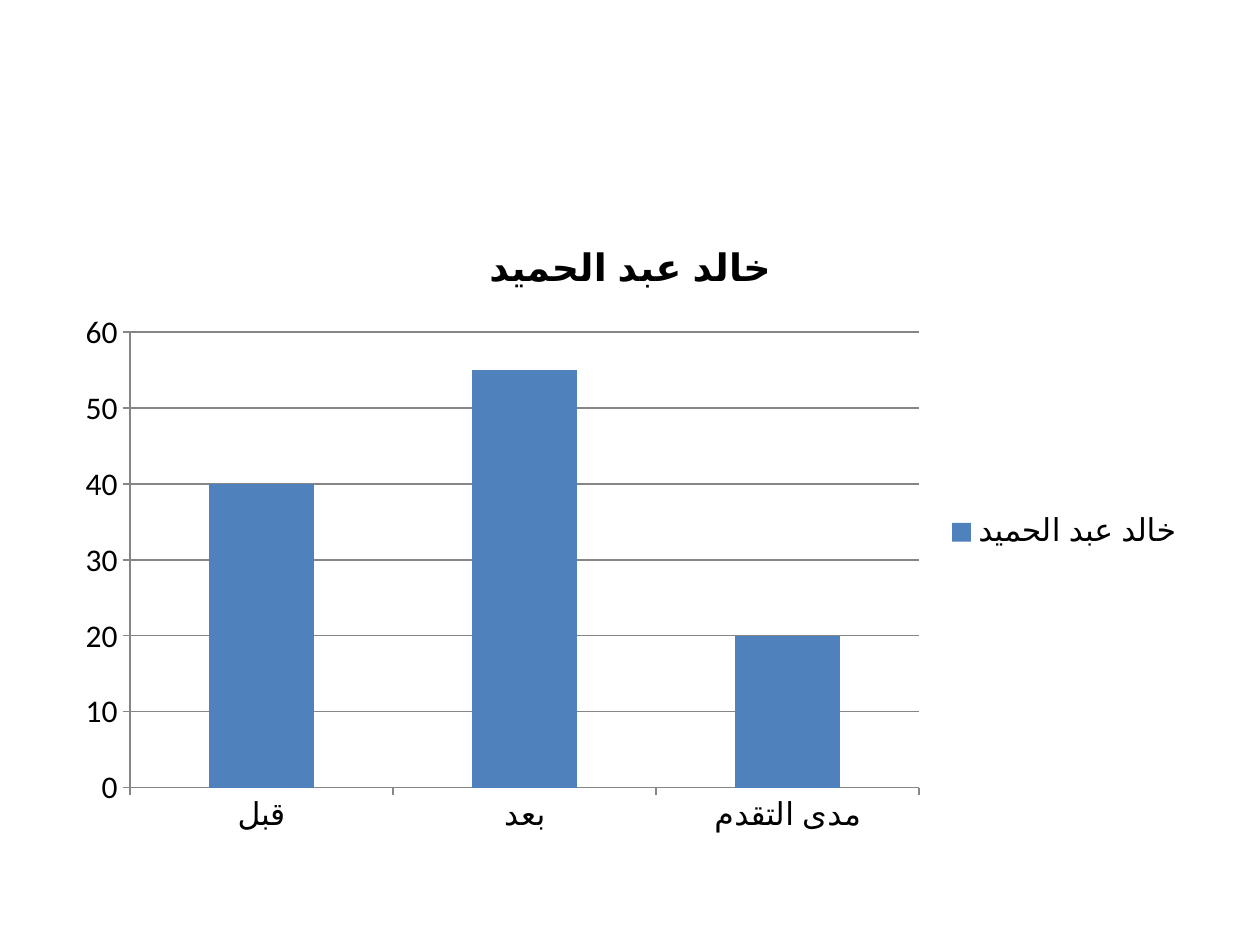
"""Build a slide with a column chart of one pupil's progress."""
import pptx
import pptx.chart.data
import pptx.dml.color
import pptx.enum.chart
import pptx.util

Pt = pptx.util.Pt
enum = pptx.enum.chart
colors = {
    name: pptx.dml.color.RGBColor.from_string(code)
    for name, code in {"text": "000000", "bar": "4F81BD", "line": "868686"}.items()
}
pupil = "خالد عبد الحميد"

deck = pptx.Presentation()
deck.slide_width, deck.slide_height = Pt(720), Pt(540)
slide = deck.slides.add_slide(deck.slide_layouts[6])

data = pptx.chart.data.CategoryChartData()
data.categories = ["قبل", "بعد", "مدى التقدم"]
data.add_series(pupil, [40, 55, 20])
chart = slide.shapes.add_chart(
    enum.XL_CHART_TYPE.COLUMN_CLUSTERED, Pt(36), Pt(126), Pt(648), Pt(356.4), data
).chart
chart.font.name = "Calibri"
chart.font.size = Pt(18)
chart.font.color.rgb = colors["text"]

chart.has_title = True
title = chart.chart_title.text_frame.paragraphs[0].add_run()
title.text = pupil
title.font.name = "Calibri"
title.font.size = Pt(21.6)
title.font.bold = True
title.font.color.rgb = colors["text"]

chart.has_legend = True
chart.legend.position = enum.XL_LEGEND_POSITION.RIGHT
chart.legend.include_in_layout = False

plot = chart.plots[0]
plot.gap_width = 150
plot.vary_by_categories = False
bars = plot.series[0].format.fill
bars.solid()
bars.fore_color.rgb = colors["bar"]

scale = chart.value_axis
scale.minimum_scale, scale.maximum_scale, scale.major_unit = 0, 60, 10
scale.has_major_gridlines = True
for axis in (chart.category_axis, scale):
    axis.major_tick_mark = enum.XL_TICK_MARK.OUTSIDE
    axis.minor_tick_mark = enum.XL_TICK_MARK.NONE
for part in (chart.category_axis, scale, scale.major_gridlines):
    part.format.line.color.rgb = colors["line"]
    part.format.line.width = Pt(0.75)

deck.save("out.pptx")
